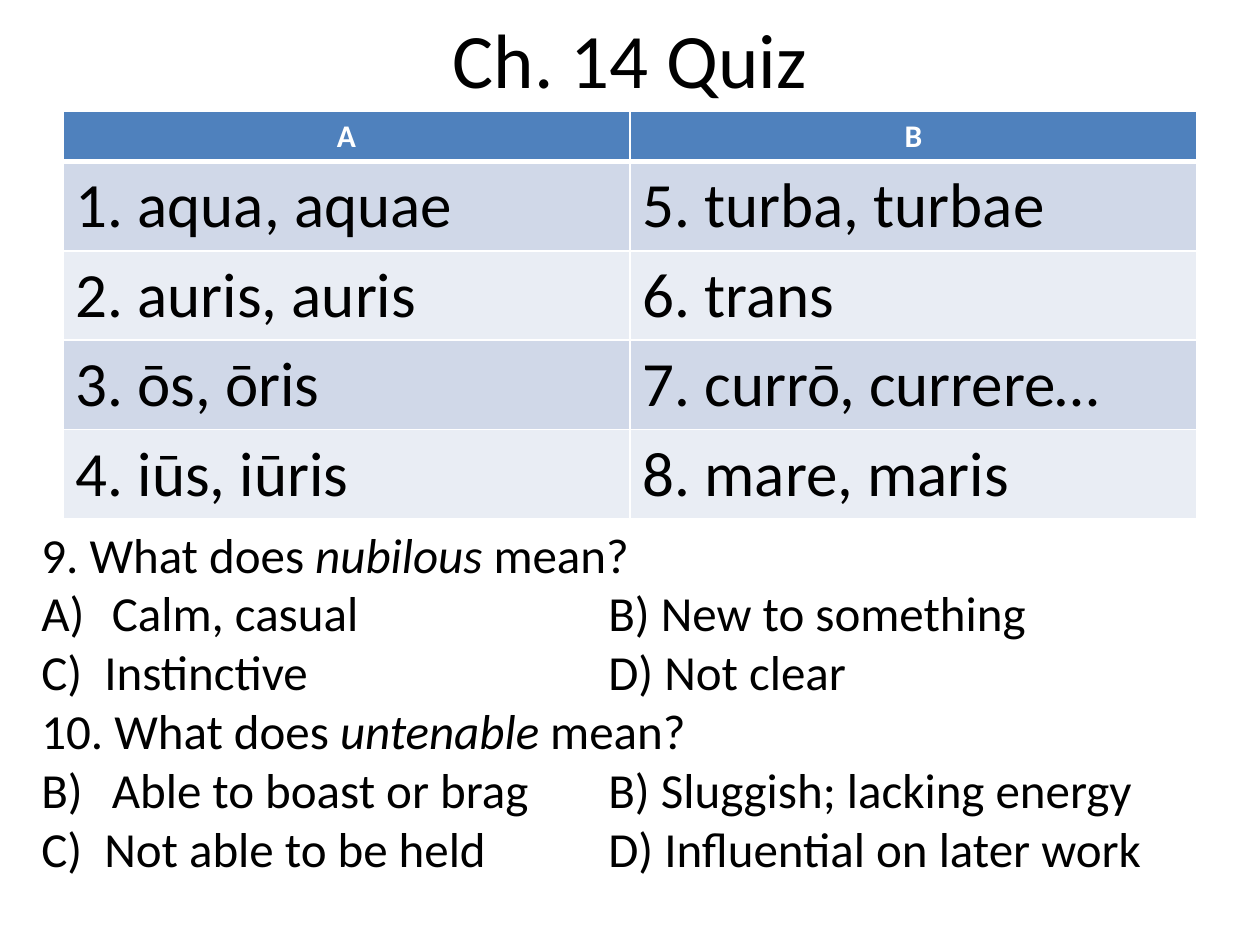
from lxml.etree import SubElement
from pptx import Presentation
from pptx.dml.color import RGBColor as RGB
from pptx.enum.text import MSO_ANCHOR as Anchor, PP_ALIGN as Align
from pptx.oxml.ns import qn
from pptx.util import Inches, Pt

TITLE = "Ch. 14 Quiz"
VOCABULARY = [
    ("A", "B"),
    ("1. aqua, aquae", "5. turba, turbae"),
    ("2. auris, auris", "6. trans"),
    ("3. ōs, ōris", "7. currō, currere…"),
    ("4. iūs, iūris", "8. mare, maris"),
]
# Each question: its wording around the italic word, the lettered line, the plain line
QUESTIONS = [
    (("9. What does ", "nubilous ", "mean?"),
     "Calm, casual\t\t\t\tB) New to something",
     "C)\tInstinctive\t\t\t\t\tD) Not clear"),
    (("10. What does ", "untenable", " mean?"),
     "Able to boast or brag\t\tB) Sluggish; lacking energy",
     "C)\tNot able to be held\t\tD) Influential on later work"),
]

BLACK, WHITE = RGB(0, 0, 0), RGB(255, 255, 255)
THEME = {
    "font": "Calibri",
    "title": {"size": Pt(44), "color": BLACK},
    "header": {"size": Pt(18), "color": WHITE, "bold": True},
    "word": {"size": Pt(36), "color": BLACK, "bold": False},
    "question": {"size": Pt(28), "color": BLACK},
    "header_fill": RGB.from_string("4F81BD"),
    "bands": [RGB.from_string("D0D8E8"), RGB.from_string("E9EDF4")],
}
HEADER_HEIGHT, WORD_HEIGHT = 0.37, 0.71
LETTER_INDENT = 0.56


def add_run(paragraph, wording, style, italic=False):
    run = paragraph.add_run()
    run.text = wording
    font_format = {"name": THEME["font"], "italic": italic, **THEME[style]}
    run.font.color.rgb = font_format.pop("color")
    for attribute, value in font_format.items():
        setattr(run.font, attribute, value)


def add_text_frame(slide, left, top, width, height):
    frame = slide.shapes.add_textbox(*map(Inches, (left, top, width, height))).text_frame
    frame.word_wrap = True
    return frame


def number_with_letter(paragraph):
    """Give the paragraph a hanging A), B), ... number."""
    props = paragraph._p.get_or_add_pPr()
    props.set("marL", str(Inches(LETTER_INDENT)))
    props.set("indent", str(-Inches(LETTER_INDENT)))
    SubElement(props, qn("a:buFont"), typeface="+mj-lt")
    SubElement(props, qn("a:buAutoNum"), type="alphaUcParenR")


def set_borders(cell, widths):
    props = cell._tc.get_or_add_tcPr()
    for position, (side, width) in enumerate(widths.items()):
        line = SubElement(props, qn(f"a:ln{side}"), w=str(Pt(width)))
        SubElement(SubElement(line, qn("a:solidFill")), qn("a:srgbClr"), val=str(WHITE))
        props.insert(position, line)


def add_title(slide):
    frame = add_text_frame(slide, 0.5, -0.17, 9, 1.25)
    frame.vertical_anchor = Anchor.MIDDLE
    frame.paragraphs[0].alignment = Align.CENTER
    add_run(frame.paragraphs[0], TITLE, "title")


def add_vocabulary(slide):
    word_rows = len(VOCABULARY) - 1
    height = HEADER_HEIGHT + word_rows * WORD_HEIGHT
    table = slide.shapes.add_table(len(VOCABULARY), 2, Inches(0.5), Inches(0.88),
                                   Inches(9), Inches(height)).table
    for r, words in enumerate(VOCABULARY):
        header = r == 0
        table.rows[r].height = Inches(HEADER_HEIGHT if header else WORD_HEIGHT)
        for c, word in enumerate(words):
            cell = table.cell(r, c)
            cell.fill.solid()
            cell.fill.fore_color.rgb = (THEME["header_fill"] if header
                                        else THEME["bands"][(r - 1) % 2])
            set_borders(cell, {"L": 1, "R": 1, "T": 3 if r == 1 else 1,
                               "B": 3 if header else 1})
            paragraph = cell.text_frame.paragraphs[0]
            paragraph.alignment = Align.CENTER if header else Align.LEFT
            add_run(paragraph, word, "header" if header else "word")


def add_questions(slide):
    frame = add_text_frame(slide, 0.23, 4.11, 9.77, 3.47)
    for q, (wording, lettered, plain) in enumerate(QUESTIONS):
        question = frame.add_paragraph() if q else frame.paragraphs[0]
        for part, words in enumerate(wording):
            add_run(question, words, "question", italic=part == 1)
        first_answers = frame.add_paragraph()
        number_with_letter(first_answers)
        add_run(first_answers, lettered, "question")
        add_run(frame.add_paragraph(), plain, "question")


def main():
    deck = Presentation()
    deck.slide_width, deck.slide_height = Inches(10), Inches(7.5)
    slide = deck.slides.add_slide(deck.slide_layouts[6])
    add_title(slide)
    add_vocabulary(slide)
    add_questions(slide)
    deck.save("out.pptx")


if __name__ == "__main__":
    main()
